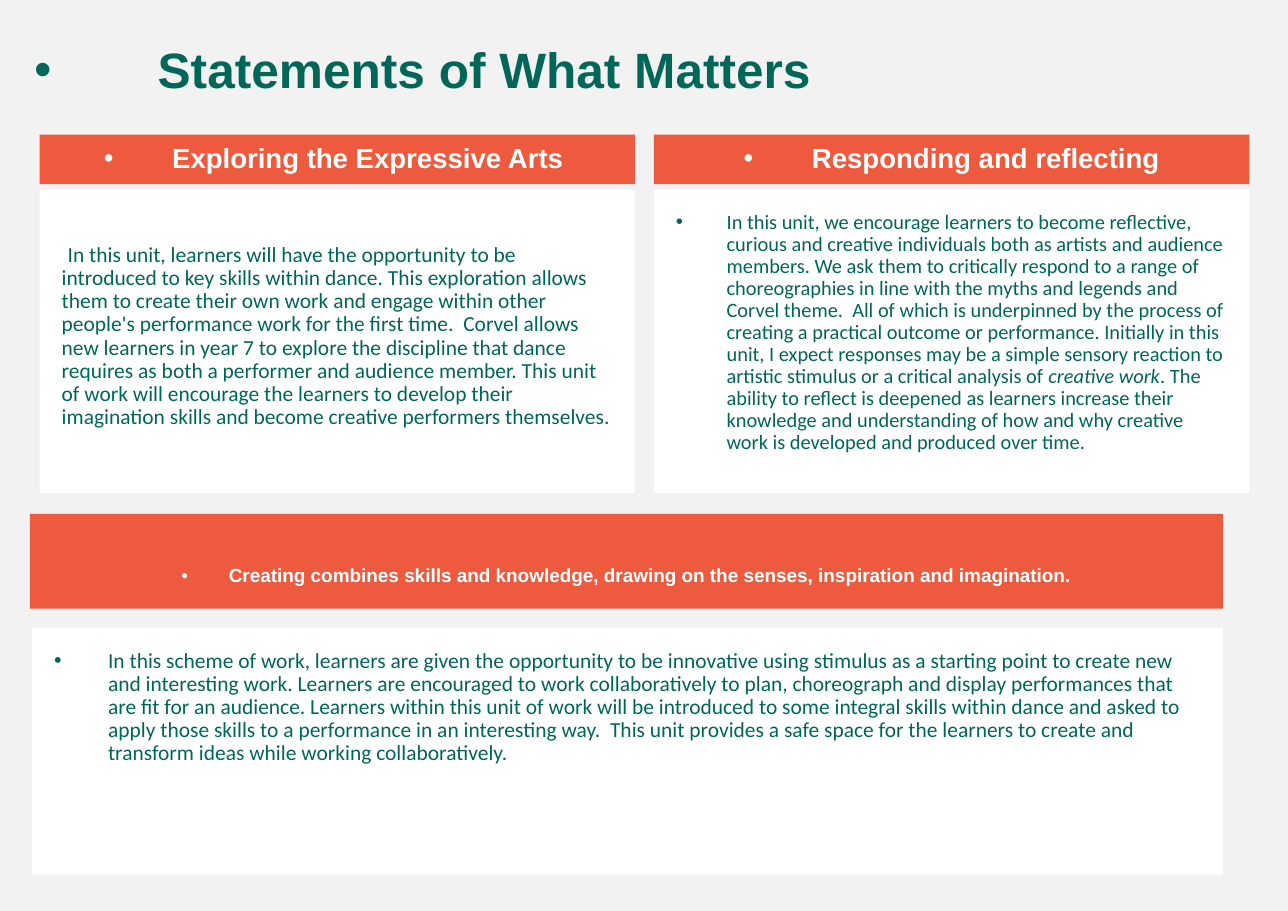
from lxml import etree
from pptx import Presentation
from pptx.dml.color import RGBColor
from pptx.enum.shapes import MSO_SHAPE
from pptx.enum.text import MSO_ANCHOR, PP_ALIGN
from pptx.oxml.ns import qn
from pptx.util import Inches, Pt

RECT = MSO_SHAPE.RECTANGLE
TOP, MIDDLE = MSO_ANCHOR.TOP, MSO_ANCHOR.MIDDLE
LEFT, CENTER = PP_ALIGN.LEFT, PP_ALIGN.CENTER

GREY = RGBColor(0xF2, 0xF2, 0xF2)
WHITE = RGBColor(0xFF, 0xFF, 0xFF)
ORANGE = RGBColor(0xED, 0x5A, 0x3E)
GREEN = RGBColor(0x00, 0x67, 0x58)

TITLE = "Statements of What Matters"
EXPLORING = (
    "Exploring the Expressive Arts ",
    "In this unit, learners will have the opportunity to be introduced to key skills within dance. "
    "This exploration allows them to create their own work and engage within other people's "
    "performance work for the first time.  Corvel allows new learners in year 7 to explore the "
    "discipline that dance requires as both a performer and audience member. This unit of work "
    "will encourage the learners to develop their imagination skills and become "
    "creative performers themselves. ",
)
RESPONDING = (
    "Responding and reflecting",
    "In this unit, we encourage learners to become reflective, curious and creative individuals "
    "both as artists and audience members. We ask them to critically respond to a range of "
    "choreographies in line with the myths and legends and Corvel theme.  All of which is "
    "underpinned by the process of creating a practical outcome or performance. Initially in this "
    "unit, I expect responses may be a simple sensory reaction to artistic stimulus or a critical "
    "analysis of ",
    "creative work",
    ". The ability to reflect is deepened as learners increase their knowledge and understanding "
    "of how and why creative work is developed and produced over time. ",
)
CREATING = (
    "Creating combines skills and knowledge, drawing on the senses, inspiration and imagination.",
    "In this scheme of work, learners are given the opportunity to be innovative using stimulus "
    "as a starting point to create new and interesting work. Learners are encouraged to work "
    "collaboratively to plan, choreograph and display performances that are fit for an audience. "
    "Learners within this unit of work will be introduced to some integral skills within dance "
    "and asked to apply those skills to a performance in an interesting way.  This unit provides "
    "a safe space for the learners to create and transform ideas while working collaboratively. ",
)

COLUMN_X, COLUMN_W, COLUMN_STEP = 0.36, 5.4, 5.57
HEADING_Y, HEADING_H = 1.22, 0.45
BODY_Y, BODY_H = 1.72, 2.75

prs = Presentation()
prs.slide_width, prs.slide_height = Inches(11.68), Inches(8.26)
slide = prs.slides.add_slide(prs.slide_layouts[6])
slide.background.fill.solid()
slide.background.fill.fore_color.rgb = GREY


def write(sp, parts, size, color=GREEN, font="Calibri", bold=False, align=LEFT,
          anchor=TOP, inset=0.2, top=None, indent=0, bullet="•", before=11):
    """Fill a shape with one bulleted paragraph; every second part is italic."""
    tf = sp.text_frame
    tf.word_wrap = True
    tf.vertical_anchor = anchor
    tf.margin_left = tf.margin_right = tf.margin_bottom = Inches(inset)
    tf.margin_top = Inches(inset if top is None else top)
    p = tf.paragraphs[0]
    p.alignment, p.line_spacing, p.space_before = align, 0.9, Pt(before)
    for i, part in enumerate(parts):
        r = p.add_run()
        r.text = part
        r.font.name, r.font.size = font, Pt(size)
        r.font.bold, r.font.italic = bold, i % 2 == 1
        r.font.color.rgb = color
    pPr = p._p.get_or_add_pPr()
    pPr.set("marL", str(Inches(indent)))
    pPr.set("indent", str(-Inches(indent)))
    etree.SubElement(pPr, qn("a:buFont")).set("typeface", "Arial")
    etree.SubElement(pPr, qn("a:buChar")).set("char", bullet)


def panel(x, y, w, h, fill, parts, size, **text_format):
    sp = slide.shapes.add_shape(RECT, Inches(x), Inches(y), Inches(w), Inches(h))
    sp.shadow.inherit = False
    sp.fill.solid()
    sp.fill.fore_color.rgb = fill
    sp.line.fill.background()
    write(sp, parts, size, **text_format)


heading = dict(color=WHITE, font="Arial", bold=True, align=CENTER, anchor=MIDDLE, inset=0.05)
columns = [
    (EXPLORING, 14, dict(top=0.49, bullet=" ")),
    (RESPONDING, 13.3, dict(indent=0.46, before=10)),
]
for i, (texts, size, body) in enumerate(columns):
    x = COLUMN_X + i * COLUMN_STEP
    panel(x, BODY_Y, COLUMN_W, BODY_H, WHITE, texts[1:], size, **body)
    panel(x, HEADING_Y, COLUMN_W, HEADING_H, ORANGE, texts[:1], 18, indent=0.62, **heading)

panel(0.27, 4.66, 10.82, 0.86, ORANGE, CREATING[:1], 12.4,
      indent=0.43, before=7, top=0.33, **heading)
panel(0.29, 5.69, 10.8, 2.24, WHITE, CREATING[1:], 14, indent=0.49)

title = slide.shapes.add_textbox(Inches(0.26), Inches(0.36), Inches(11.08), Inches(0.65))
write(title, [TITLE], 32.4, font="Arial", bold=True, inset=0.05, indent=1.12, before=9)

prs.save("out.pptx")
